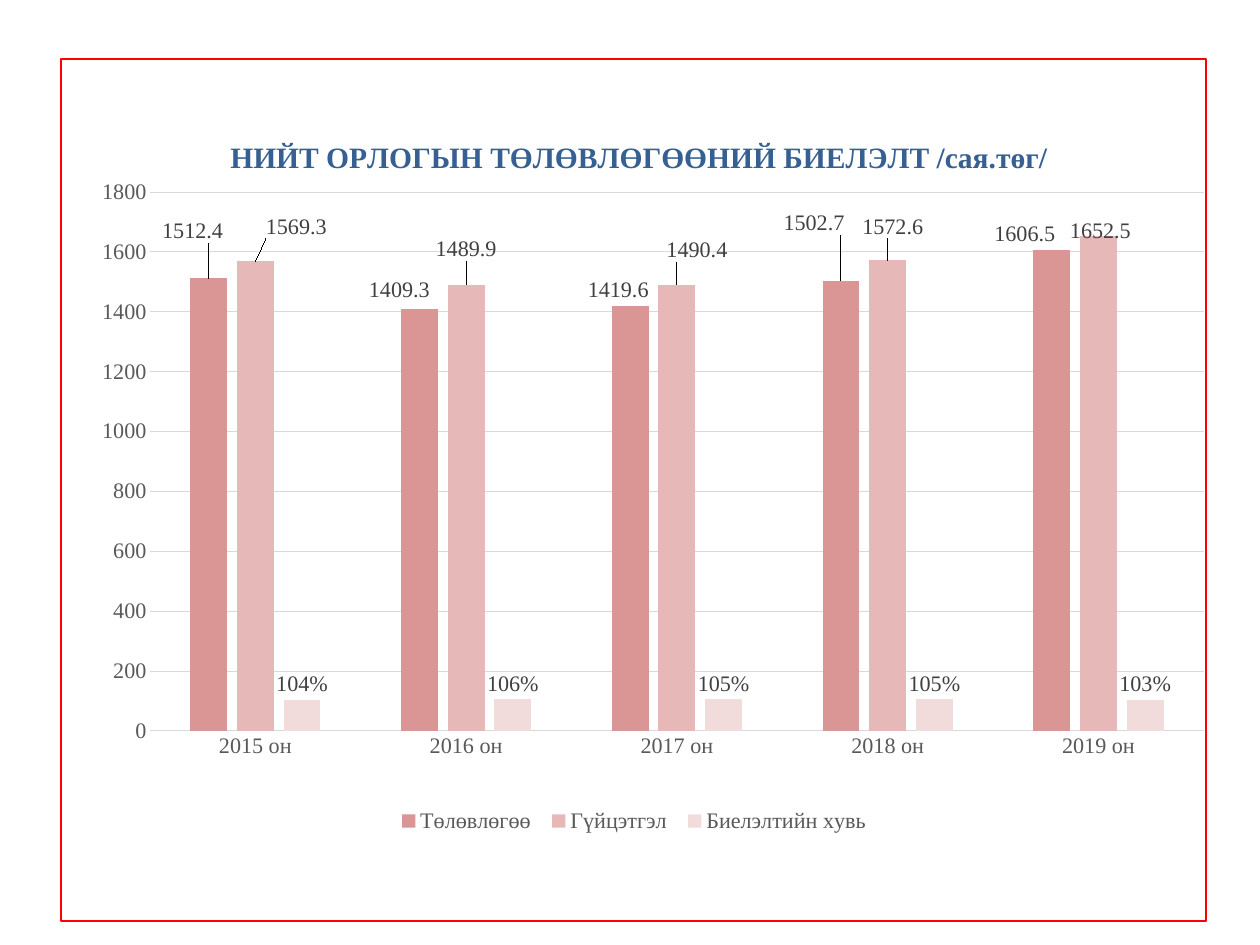
"""Build a slide with a framed column chart of income plan fulfilment."""
from dataclasses import dataclass

from lxml.etree import SubElement
from pptx import Presentation
from pptx.chart.data import CategoryChartData
from pptx.dml.color import RGBColor
from pptx.enum.chart import XL_CHART_TYPE, XL_LABEL_POSITION, XL_LEGEND_POSITION, XL_TICK_MARK
from pptx.enum.shapes import MSO_SHAPE
from pptx.oxml import parse_xml
from pptx.oxml.ns import nsdecls, qn
from pptx.util import Pt

SCALE = 10320


@dataclass(frozen=True)
class Theme:
    face: str = "Times New Roman"
    frame: str = "FF0000"
    title: str = "376092"
    axis: str = "595959"
    label: str = "404040"
    grid: str = "D9D9D9"
    head: int = 24
    body: int = 18


@dataclass(frozen=True)
class Box:
    left: int
    top: int
    width: int
    height: int

    def emu(self) -> list[int]:
        return [n * SCALE for n in (self.left, self.top, self.width, self.height)]


@dataclass(frozen=True)
class Series:
    name: str
    values: tuple[float, ...]
    color: str
    form: str = "General"
    shifts: tuple[tuple[int, int], ...] = ()


THEME = Theme()
PAGE = Box(0, 0, 1260, 945)
FRAME = Box(61, 59, 1145, 862)
CHART = Box(61, 104, 1145, 768)
TITLE = "НИЙТ ОРЛОГЫН ТӨЛӨВЛӨГӨӨНИЙ БИЕЛЭЛТ /сая.төг/"
YEARS = [f"{year} он" for year in range(2015, 2020)]
SERIES = (
    Series("Төлөвлөгөө", (1512.4, 1409.3, 1419.6, 1502.7, 1606.5), "D99694",
           shifts=((-16, -31), (-20, -3), (-12, 0), (-27, -42), (-27, 0))),
    Series("Гүйцэтгэл", (1569.3, 1489.9, 1490.4, 1572.6, 1652.5), "E6B9B8",
           shifts=((41, -19), (0, -20), (20, -19), (5, -18), (2, 10))),
    Series("Биелэлтийн хувь", (104, 106, 105, 105, 103), "F2DCDB", '0"%"'),
)


def style(font, color: str, size: int = THEME.body, bold: bool = False) -> None:
    font.name, font.size, font.bold = THEME.face, Pt(size), bold
    font.color.rgb = RGBColor.from_string(color)


def stroke(line, color: str, width: float) -> None:
    line.color.rgb = RGBColor.from_string(color)
    line.width = Pt(width)


def place(node, spot: int, edge: bool, *sides: int, inner: bool = False) -> None:
    for old in node.findall(qn("c:layout")):
        node.remove(old)
    layout = parse_xml(f"<c:layout {nsdecls('c')}><c:manualLayout/></c:layout>")
    parts = [("layoutTarget", "inner")] if inner else []
    if edge:
        parts += [("xMode", "edge"), ("yMode", "edge")]
    spans = (CHART.width, CHART.height) * 2
    parts += [(key, f"{side / span:.4f}") for key, side, span in zip("xywh", sides, spans)]
    for key, value in parts:
        SubElement(layout[0], qn(f"c:{key}")).set("val", value)
    node.insert(spot, layout)


def paint(bars, item: Series) -> None:
    bars.format.fill.solid()
    bars.format.fill.fore_color.rgb = RGBColor.from_string(item.color)
    bars.invert_if_negative = False
    tags = bars.data_labels
    tags.show_value = True
    tags.number_format, tags.number_format_is_linked = item.form, False
    tags.position = XL_LABEL_POSITION.OUTSIDE_END
    style(tags.font, THEME.label)
    for index, shift in enumerate(item.shifts):
        tag = bars.points[index].data_label
        style(tag.font, THEME.label)
        tag.position = XL_LABEL_POSITION.OUTSIDE_END
    for node, shift in zip(tags._element.findall(qn("c:dLbl")), item.shifts):
        place(node, 1, False, *shift)


def adjust(chart) -> None:
    style(chart.font, THEME.axis)
    chart.has_title = chart.has_legend = True
    frame = chart.chart_title.text_frame
    frame.text = TITLE
    style(frame.paragraphs[0].runs[0].font, THEME.title, THEME.head, True)
    chart.legend.position = XL_LEGEND_POSITION.BOTTOM
    chart.legend.include_in_layout = False
    style(chart.legend.font, THEME.axis)
    root = chart.element
    place(root.find(f".//{qn('c:title')}"), 1, True, 164, 29)
    place(root.find(f".//{qn('c:legend')}"), 1, True, 327, 699, 492, 36)
    place(root.find(f".//{qn('c:plotArea')}"), 0, True, 89, 88, 1054, 539, inner=True)
    clear = "<a:noFill/><a:ln><a:noFill/></a:ln>"
    root.find(qn("c:chart")).addnext(parse_xml(f"<c:spPr {nsdecls('c', 'a')}>{clear}</c:spPr>"))
    for axis in (chart.category_axis, chart.value_axis):
        axis.major_tick_mark = axis.minor_tick_mark = XL_TICK_MARK.NONE
        style(axis.tick_labels.font, THEME.axis)
    stroke(chart.category_axis.format.line, THEME.grid, 0.75)
    scale = chart.value_axis
    scale.minimum_scale, scale.maximum_scale, scale.major_unit = 0, 1800, 200
    scale.format.line.fill.background()
    scale.has_major_gridlines = True
    stroke(scale.major_gridlines.format.line, THEME.grid, 0.75)
    plot = chart.plots[0]
    plot.gap_width, plot.overlap, plot.vary_by_categories = 219, -27, False
    for bars, item in zip(plot.series, SERIES):
        paint(bars, item)


def main() -> None:
    deck = Presentation()
    deck.slide_width, deck.slide_height = PAGE.emu()[2:]
    slide = deck.slides.add_slide(deck.slide_layouts[6])
    frame = slide.shapes.add_shape(MSO_SHAPE.RECTANGLE, *FRAME.emu())
    frame.shadow.inherit = False
    frame.fill.background()
    stroke(frame.line, THEME.frame, 2.25)
    data = CategoryChartData()
    data.categories = YEARS
    for item in SERIES:
        data.add_series(item.name, item.values)
    adjust(slide.shapes.add_chart(XL_CHART_TYPE.COLUMN_CLUSTERED, *CHART.emu(), data).chart)
    deck.save("out.pptx")


if __name__ == "__main__":
    main()
